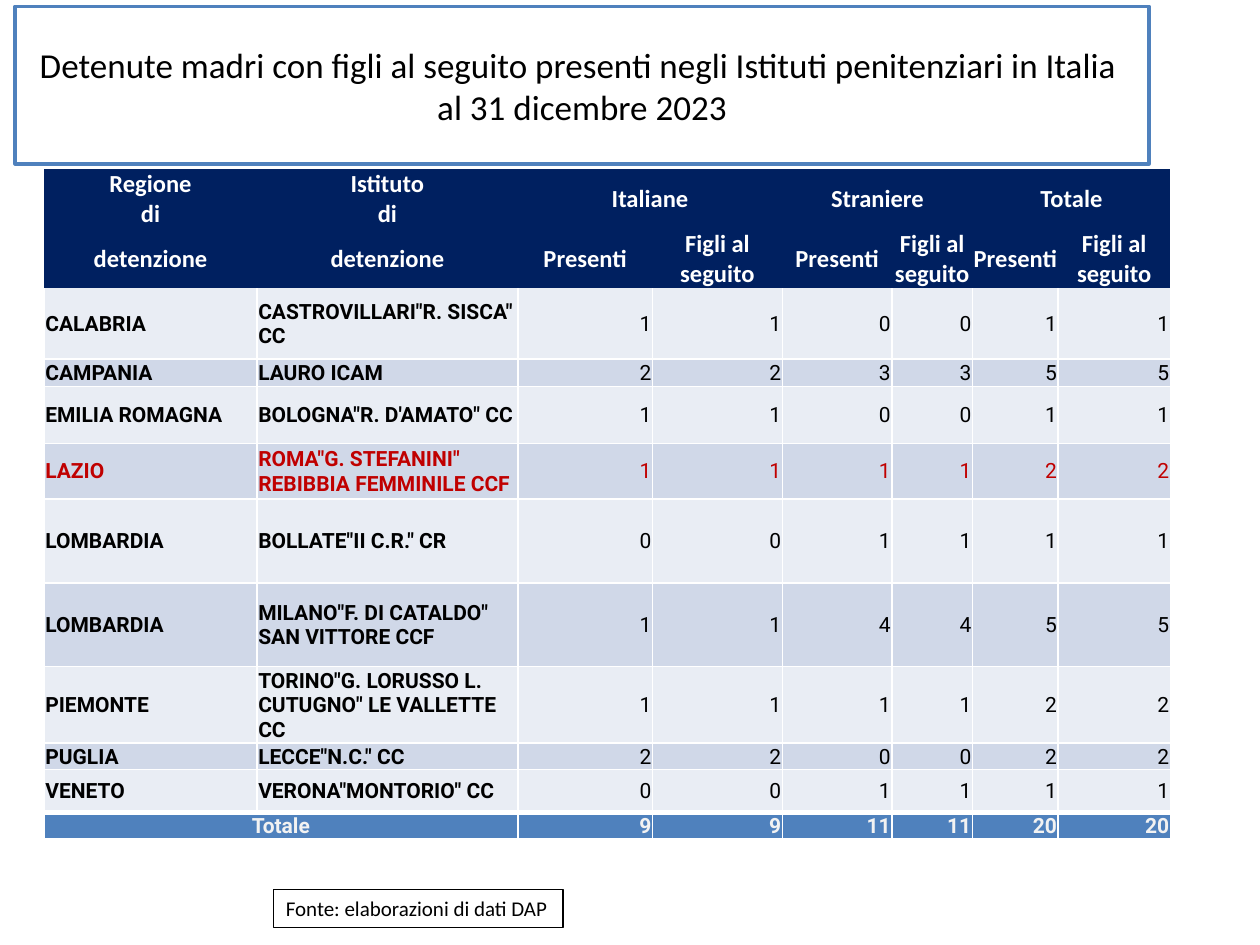
from lxml import etree
from pptx import Presentation
from pptx.dml.color import RGBColor
from pptx.enum import shapes, text
from pptx.oxml import ns
from pptx.util import Inches, Pt

WHITE = RGBColor(0xFF, 0xFF, 0xFF)
BLACK = RGBColor(0, 0, 0)
NAVY = RGBColor(0x00, 0x20, 0x60)
BLUE = RGBColor(0x4F, 0x81, 0xBD)
LIGHT = RGBColor(0xE9, 0xED, 0xF4)
DARKER = RGBColor(0xD0, 0xD8, 0xE8)
RED = RGBColor(0xC0, 0, 0)
PALE = RGBColor(0xF2, 0xF2, 0xF2)
NO_GRID_STYLE = "{2D5ABB26-0587-4C30-8999-92F81FD0307C}"
LEFT, CENTER, RIGHT = text.PP_ALIGN.LEFT, text.PP_ALIGN.CENTER, text.PP_ALIGN.RIGHT

TITLE = ("Detenute madri con figli al seguito presenti negli Istituti penitenziari in Italia "
         "\val 31 dicembre 2023")
SOURCE = "Fonte: elaborazioni di dati DAP"
HEADER = [
    ["Regione", "Istituto", "Italiane", "", "Straniere", "", "Totale", ""],
    ["di", "di", "", "", "", "", "", ""],
    ["detenzione", "detenzione"] + ["Presenti", "Figli al seguito"] * 3,
]
BODY = [
    ["CALABRIA", 'CASTROVILLARI"R. SISCA" CC', 1, 1, 0, 0, 1, 1],
    ["CAMPANIA", "LAURO ICAM", 2, 2, 3, 3, 5, 5],
    ["EMILIA ROMAGNA", 'BOLOGNA"R. D\'AMATO" CC', 1, 1, 0, 0, 1, 1],
    ["LAZIO", 'ROMA"G. STEFANINI" REBIBBIA FEMMINILE CCF', 1, 1, 1, 1, 2, 2],
    ["LOMBARDIA", 'BOLLATE"II C.R." CR', 0, 0, 1, 1, 1, 1],
    ["LOMBARDIA", 'MILANO"F. DI CATALDO" SAN VITTORE CCF', 1, 1, 4, 4, 5, 5],
    ["PIEMONTE", 'TORINO"G. LORUSSO L. CUTUGNO" LE VALLETTE CC', 1, 1, 1, 1, 2, 2],
    ["PUGLIA", 'LECCE"N.C." CC', 2, 2, 0, 0, 2, 2],
    ["VENETO", 'VERONA"MONTORIO" CC', 0, 0, 1, 1, 1, 1],
]
TOTAL = ["Totale", "", 9, 9, 11, 11, 20, 20]
ROWS = HEADER + BODY + [TOTAL]
COLUMN_WIDTHS = [1.69, 2.07, 1.07, 1.03, 0.87, 0.64, 0.68, 0.89]
ROW_HEIGHTS = [0.24, 0.24, 0.47, 0.56, 0.22, 0.45, 0.44, 0.67, 0.66, 0.61, 0.21, 0.34, 0.21]
HIGHLIGHT = "LAZIO"


def write(frame, content, size=12, font="Calibri", color=BLACK, bold=False, align=LEFT):
    paragraph = frame.paragraphs[0]
    paragraph.text = str(content)
    paragraph.alignment = align
    for run in paragraph.runs:
        run.font.size = Pt(size)
        run.font.name = font
        run.font.bold = bold
        run.font.color.rgb = color


def add_box(slide, place, line_color, line_width, content, wrap=True, **style):
    box = slide.shapes.add_shape(shapes.MSO_SHAPE.RECTANGLE, *map(Inches, place))
    box.shadow.inherit = False
    box.fill.solid()
    box.fill.fore_color.rgb = WHITE
    box.line.color.rgb = line_color
    box.line.width = Pt(line_width)
    box.text_frame.word_wrap = wrap
    box.text_frame.vertical_anchor = text.MSO_ANCHOR.MIDDLE
    write(box.text_frame, content, **style)
    return box


def set_borders(cell, widths):
    properties = cell._tc.get_or_add_tcPr()
    for side, width in widths.items():
        line = etree.SubElement(properties, ns.qn(f"a:ln{side}"), w=str(Pt(width)))
        fill = etree.SubElement(line, ns.qn("a:solidFill"))
        etree.SubElement(fill, ns.qn("a:srgbClr"), val=str(WHITE))


def row_style(index):
    if index < len(HEADER):
        return NAVY, WHITE, {}
    if index == len(ROWS) - 1:
        return BLUE, PALE, {"L": 1, "R": 1, "T": 3, "B": 1}
    fill = DARKER if (index - len(HEADER)) % 2 else LIGHT
    color = RED if ROWS[index][0] == HIGHLIGHT else BLACK
    borders = {"L": 1, "R": 1, "B": 3 if index == len(ROWS) - 2 else 1}
    return fill, color, borders


def add_table(slide):
    frame = slide.shapes.add_table(len(ROWS), len(COLUMN_WIDTHS), Inches(0.35), Inches(1.34),
                                   Inches(sum(COLUMN_WIDTHS)), Inches(sum(ROW_HEIGHTS)))
    table = frame.table
    table._tbl.tblPr.find(ns.qn("a:tableStyleId")).text = NO_GRID_STYLE
    table.first_row = table.horz_banding = False
    for column, width in zip(table.columns, COLUMN_WIDTHS):
        column.width = Inches(width)
    for row, height in zip(table.rows, ROW_HEIGHTS):
        row.height = Inches(height)
    last = len(ROWS) - 1
    for column in (2, 4, 6):
        table.cell(0, column).merge(table.cell(1, column + 1))
    table.cell(last, 0).merge(table.cell(last, 1))

    for r, values in enumerate(ROWS):
        fill, color, borders = row_style(r)
        is_header = r < len(HEADER)
        inset = Inches(0 if is_header else 0.01)
        for c, value in enumerate(values):
            cell = table.cell(r, c)
            set_borders(cell, borders)
            cell.fill.solid()
            cell.fill.fore_color.rgb = fill
            cell.margin_left = cell.margin_right = cell.margin_top = inset
            cell.margin_bottom = 0
            cell.vertical_anchor = text.MSO_ANCHOR.MIDDLE
            if cell.is_spanned:
                continue
            centered = is_header or (r == last and c == 0)
            write(cell.text_frame, value, color=color,
                  size=14 if is_header else 12,
                  font="Calibri" if is_header else "Roboto",
                  bold=is_header or r == last or c < 2,
                  align=CENTER if centered else LEFT if c < 2 else RIGHT)


def main():
    presentation = Presentation()
    presentation.slide_width, presentation.slide_height = Inches(10), Inches(7.5)
    slide = presentation.slides.add_slide(presentation.slide_layouts[6])
    add_box(slide, (0.12, 0.05, 9, 1.25), BLUE, 2, TITLE, size=20, align=CENTER)
    source = add_box(slide, (2.17, 7.06, 2.3, 0.3), BLACK, 0.75, SOURCE, wrap=False)
    source.text_frame.auto_size = text.MSO_AUTO_SIZE.SHAPE_TO_FIT_TEXT
    add_table(slide)
    presentation.save("out.pptx")


if __name__ == "__main__":
    main()
